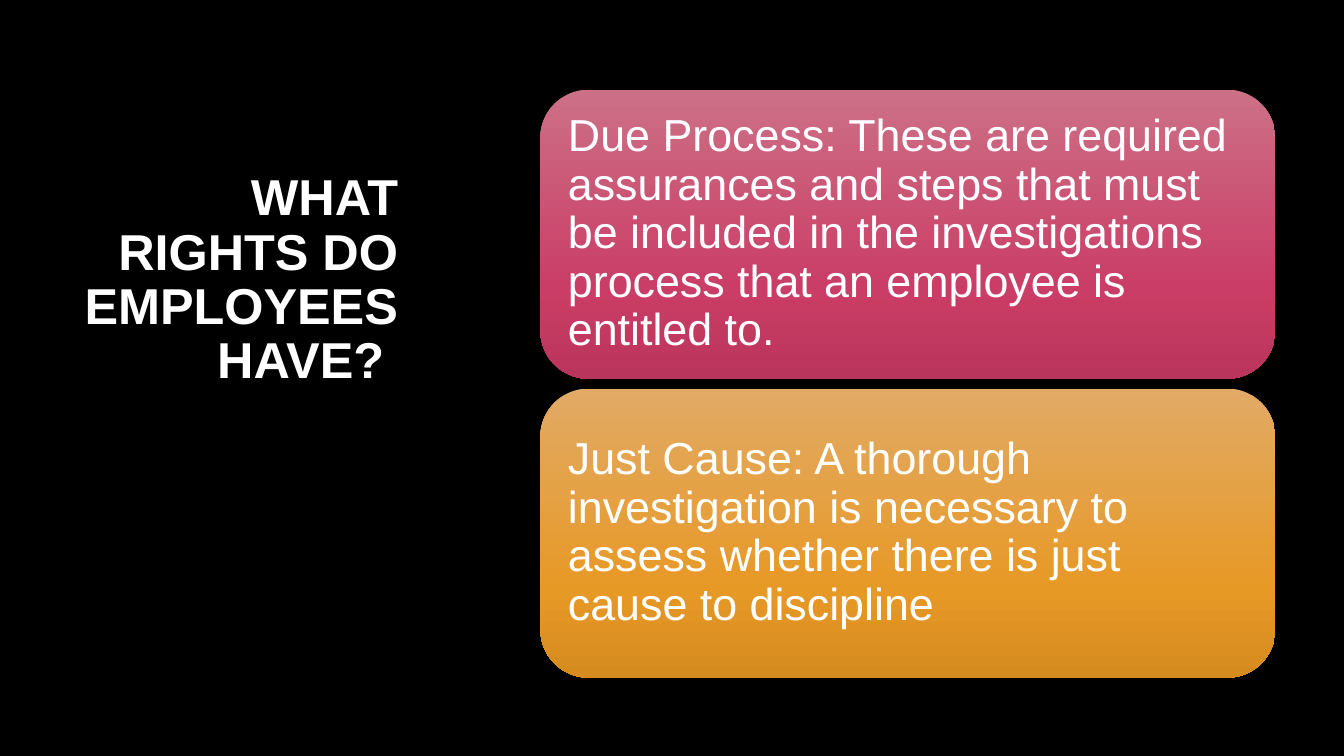
"""Builds a slide on the rights employees have during an investigation."""
from lxml.etree import SubElement
from pptx import Presentation
from pptx.dml.color import RGBColor as Rgb
from pptx.enum.shapes import MSO_SHAPE as Preset
from pptx.enum.text import MSO_ANCHOR as Anchor, PP_ALIGN as Align
from pptx.oxml.ns import qn
from pptx.util import Pt

COLORS = {
    "background": "000000",
    "text": "FFFFFF",
    "due_process": ("CC7087", "CA3D66", "BA355B"),
    "just_cause": ("E2AA66", "E79926", "D68B1F"),
}
STOPS = (0, 69, 100)
RIGHTS = (
    ("due_process", "Due Process: These are required assurances and steps that must be "
                    "included in the investigations process that an employee is entitled to."),
    ("just_cause", "Just Cause: A thorough investigation is necessary to assess whether "
                   "there is just cause to discipline"),
)
CARD_LEFT, CARD_TOP, CARD_WIDTH, CARD_HEIGHT, CARD_GAP = 386, 64, 525, 206.5, 7


class RightsSlide:
    font = "Arial"
    line_spacing = 0.9

    def __init__(self, slide):
        self.slide = slide
        backdrop = slide.background.fill
        backdrop.solid()
        backdrop.fore_color.rgb = Rgb.from_string(COLORS["background"])

    def add_text(self, frame, wording, size, align, anchor, insets, bold=False):
        frame.word_wrap = True
        frame.vertical_anchor = anchor
        (frame.margin_left, frame.margin_top,
         frame.margin_right, frame.margin_bottom) = map(Pt, insets)
        paragraph = frame.paragraphs[0]
        paragraph.alignment = align
        paragraph.line_spacing = self.line_spacing
        run = paragraph.add_run()
        run.text = wording
        run.font.name, run.font.size, run.font.bold = self.font, Pt(size), bold
        run.font.color.rgb = Rgb.from_string(COLORS["text"])

    def add_title(self, wording, left, top, width, height):
        heading = self.slide.shapes.add_textbox(Pt(left), Pt(top), Pt(width), Pt(height))
        self.add_text(heading.text_frame, wording, 36, Align.RIGHT, Anchor.BOTTOM,
                      (7.2, 3.6, 7.2, 42.5), bold=True)

    def add_card(self, wording, shades, left, top, width, height):
        card = self.slide.shapes.add_shape(
            Preset.ROUNDED_RECTANGLE, Pt(left), Pt(top), Pt(width), Pt(height))
        card.shadow.inherit = False
        card.line.fill.background()
        self.shade(card, shades)
        self.add_text(card.text_frame, wording, 32, Align.LEFT, Anchor.MIDDLE, (9.6,) * 4)

    def shade(self, card, shades):
        card.fill.gradient()
        card.fill.gradient_angle = 270
        stop_list = card._element.spPr.find(qn("a:gradFill")).find(qn("a:gsLst"))
        for stop in list(stop_list):
            stop_list.remove(stop)
        for percent, shade in zip(STOPS, shades):
            stop = SubElement(stop_list, qn("a:gs"), pos=str(percent * 1000))
            SubElement(stop, qn("a:srgbClr"), val=shade)


def main():
    deck = Presentation()
    deck.slide_width, deck.slide_height = Pt(960), Pt(540)
    page = RightsSlide(deck.slides.add_slide(deck.slide_layouts[6]))
    page.add_title("WHAT RIGHTS DO EMPLOYEES HAVE? ", 46, 132.5, 245.5, 188.5)
    for index, (right, wording) in enumerate(RIGHTS):
        top = CARD_TOP + index * (CARD_HEIGHT + CARD_GAP)
        page.add_card(wording, COLORS[right], CARD_LEFT, top, CARD_WIDTH, CARD_HEIGHT)
    deck.save("out.pptx")


if __name__ == "__main__":
    main()
